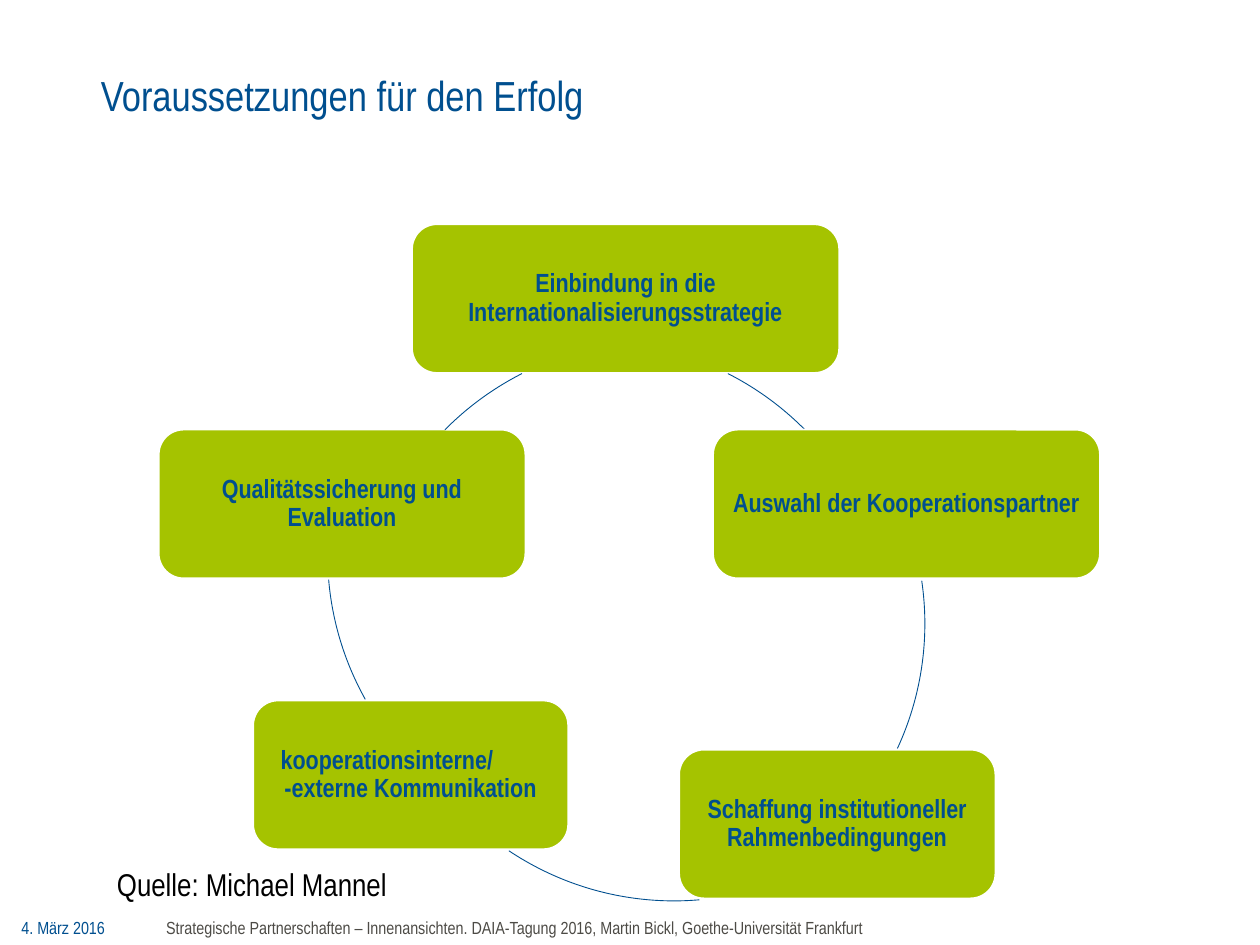
import math
from lxml import etree
from pptx import Presentation
from pptx import util as u
from pptx.dml.color import RGBColor
from pptx.enum import shapes, text

PX = 9144
FONT = "Arial Narrow"
COLORS = {"blue": "004F8F", "green": "A5C300", "grey": "4D4B46",
          "black": "000000", "white": "FFFFFF"}
CARD_H = 118
RING_D = 472
FOOTER = ("Strategische Partnerschaften – Innenansichten. DAIA-Tagung 2016, "
          "Martin Bickl, Goethe-Universität Frankfurt")

CARDS = [
    (327, 178, 339, ["Einbindung in die Internationalisierungsstrategie"]),
    (566, 341, 307, ["Auswahl der Kooperationspartner"]),
    (539, 595, 251, ["Schaffung institutioneller Rahmenbedingungen"]),
    (201, 556, 250, ["kooperationsinterne/", "-externe Kommunikation"]),
    (126, 341, 291, ["Qualitätssicherung und Evaluation"]),
]
ARCS = [
    (235, 271, (578, 296), (639, 341)),
    (262, 259, (731, 461), (712, 594)),
    (299, 243, (555, 714), (404, 675)),
    (260, 204, (290, 555), (261, 460)),
    (285, 271, (353, 341), (414, 296)),
]


def rgb(name):
    return RGBColor.from_string(COLORS[name])


def emu(*lengths):
    return [u.Emu(n * PX) for n in lengths]


def add_run(p, words, size, color, bold=False):
    r = p.add_run()
    r.text = words
    r.font.name = FONT
    r.font.size = u.Pt(size)
    r.font.bold = bold
    r.font.color.rgb = rgb(color)


def set_margins(tf, x, y):
    tf.margin_left = tf.margin_right = u.Emu(x * PX)
    tf.margin_top = tf.margin_bottom = u.Emu(y * PX)


def add_title(s, box, words):
    sp = s.shapes.title
    sp.left, sp.top, sp.width, sp.height = emu(*box)
    tf = sp.text_frame
    tf.auto_size = text.MSO_AUTO_SIZE.NONE
    tf.vertical_anchor = text.MSO_ANCHOR.BOTTOM
    set_margins(tf, 10, 5)
    p = tf.paragraphs[0]
    p.alignment = text.PP_ALIGN.LEFT
    add_run(p, words, 24, "blue")


def add_label(s, box, words, size, color, margins=(10, 5), wrap=False):
    tf = s.shapes.add_textbox(*emu(*box)).text_frame
    tf.word_wrap = wrap
    set_margins(tf, *margins)
    add_run(tf.paragraphs[0], words, size, color)


def add_card(s, box, lines):
    sp = s.shapes.add_shape(shapes.MSO_SHAPE.ROUNDED_RECTANGLE, *emu(*box))
    sp.shadow.inherit = False
    sp.fill.solid()
    sp.fill.fore_color.rgb = rgb("green")
    sp.line.color.rgb = rgb("white")
    sp.line.width = u.Pt(1)
    tf = sp.text_frame
    tf.word_wrap = True
    tf.vertical_anchor = text.MSO_ANCHOR.MIDDLE
    set_margins(tf, 6, 6)
    for i, line in enumerate(lines):
        p = tf.add_paragraph() if i else tf.paragraphs[0]
        p.alignment = text.PP_ALIGN.CENTER
        p.line_spacing = 0.9
        add_run(p, line, 15, "blue", True)
    if len(lines) > 1:
        p = tf.paragraphs[0]
        p.alignment = text.PP_ALIGN.LEFT
        p._p.get_or_add_pPr().set("marL", str(10 * PX))


def add_arc(s, box, start, end):
    left, top, width, height = box
    sp = s.shapes.add_shape(shapes.MSO_SHAPE.ARC, *emu(*box))
    sp.shadow.inherit = False
    sp.fill.background()
    sp.line.color.rgb = rgb("blue")
    sp.line.width = u.Pt(0.5)
    for i, (x, y) in enumerate((start, end)):
        angle = math.atan2(y - top - height / 2, x - left - width / 2)
        sp.adjustments[i] = math.degrees(angle) % 360 * 0.6


def add_cycle(s, box):
    x0, y0 = box[:2]
    for (x, y, w, lines), (ax, ay, start, end) in zip(CARDS, ARCS):
        add_card(s, (x0 + x, y0 + y, w, CARD_H), lines)
        ends = [(x0 + px, y0 + py) for px, py in (start, end)]
        add_arc(s, (x0 + ax, y0 + ay, RING_D, RING_D), *ends)


def add_footer(s, box):
    x, y = box[:2]
    add_label(s, (x + 17, y + 5, 83, 17), "4. März 2016", 10, "blue", (0, 0))
    add_label(s, (x + 122, y, 772, 22), FOOTER, 10, "grey", wrap=True)


def main():
    prs = Presentation()
    prs.slide_width, prs.slide_height = emu(1000, 750)
    s = prs.slides.add_slide(prs.slide_layouts[5])
    add_title(s, (70, 13, 722, 87), "Voraussetzungen für den Erfolg")
    add_cycle(s, (0, 0, 1000, 750))
    add_label(s, (83, 682, 237, 40), "Quelle: Michael Mannel", 18, "black")
    add_footer(s, (0, 723, 1000, 27))
    prs.save("out.pptx")


if __name__ == "__main__":
    main()
